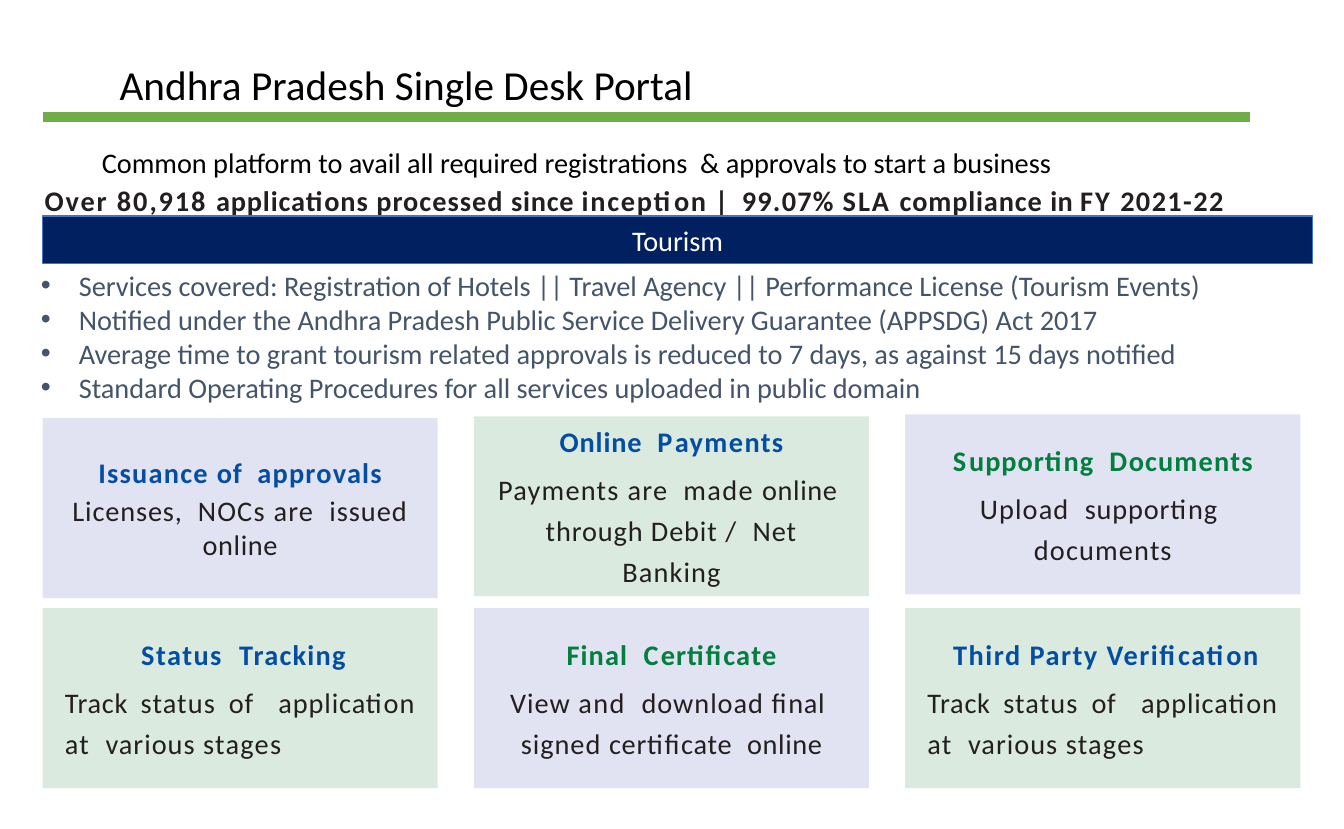
from lxml import etree
from pptx import Presentation
from pptx.dml.color import RGBColor
from pptx.enum.shapes import MSO_CONNECTOR, MSO_SHAPE
from pptx.enum.text import MSO_ANCHOR, MSO_AUTO_SIZE, PP_ALIGN
from pptx.oxml.ns import qn
from pptx.util import Inches, Pt

RECTANGLE = MSO_SHAPE.RECTANGLE
STRAIGHT = MSO_CONNECTOR.STRAIGHT
MIDDLE, TOP = MSO_ANCHOR.MIDDLE, MSO_ANCHOR.TOP
LEFT, CENTER, JUSTIFY = PP_ALIGN.LEFT, PP_ALIGN.CENTER, PP_ALIGN.JUSTIFY
NO_AUTOFIT = MSO_AUTO_SIZE.NONE

COLORS = {
    "black": "000000", "white": "FFFFFF", "ink": "231F20", "slate": "44546A",
    "navy": "002060", "outline": "4472C4", "rule": "70AD47",
    "blue": "034EA2", "green": "007F3E", "lavender": "E1E2F2", "mint": "DBEADF",
}

# Grid: left edge, full width, and the cards' columns and rows (inches)
MARGIN, FULL_WIDTH = 0.46, 13.69
CARD_WIDTH, CARD_HEIGHT, COLUMN_STEP = 4.26, 1.94, 4.65
ROW_TOPS, ROW_SLOPES = (4.51, 6.56), (-0.02, 0)


def set_up_frame(shape, anchor, insets):
    """Return the shape's wrapping text frame with left, top, right, bottom insets."""
    frame = shape.text_frame
    frame.word_wrap = True
    frame.auto_size = NO_AUTOFIT
    frame.vertical_anchor = anchor
    frame.margin_left, frame.margin_top, frame.margin_right, frame.margin_bottom = map(Inches, insets)
    return frame


def write(paragraph, runs, color, size=22, bold=False, align=LEFT,
          before=0, line_spacing=1.0, left=0, right=0, first=0):
    """Format a paragraph and add its (text, letter spacing) runs."""
    paragraph.alignment = align
    paragraph.space_before = Pt(before)
    paragraph.line_spacing = line_spacing
    properties = paragraph._p.get_or_add_pPr()
    for name, length in (("marL", left), ("marR", right), ("indent", first)):
        properties.set(name, str(Inches(length)))
    for text, spacing in runs:
        run = paragraph.add_run()
        run.text = text
        run.font.name = "Calibri"
        run.font.size = Pt(size)
        run.font.bold = bold
        run.font.color.rgb = RGBColor.from_string(COLORS[color])
        if spacing:
            run._r.get_or_add_rPr().set("spc", str(round(spacing * 100)))


presentation = Presentation()
presentation.slide_width, presentation.slide_height = Inches(14.49), Inches(8.94)
slide = presentation.slides.add_slide(presentation.slide_layouts[1])
shapes = slide.shapes
title, services = slide.placeholders

# Title and the rule under it
title.left, title.top, title.width, title.height = map(Inches, (1.19, 0.63, 12.12, 0.63))
frame = set_up_frame(title, MIDDLE, (0.1, 0.05, 0.1, 0.05))
write(frame.paragraphs[0], [("Andhra Pradesh Single Desk Portal", 0)], "black", size=32, line_spacing=0.9)

rule = shapes.add_connector(STRAIGHT, Inches(MARGIN), Inches(1.26), Inches(13.48), Inches(1.26))
rule.line.color.rgb = RGBColor.from_string(COLORS["rule"])
rule.line.width = Pt(8)
etree.SubElement(rule._element.spPr, qn("a:effectLst"))

# Introduction and key figures
introduction = shapes.add_textbox(*map(Inches, (1, 1.52, 12.48, 0.47)))
frame = set_up_frame(introduction, TOP, (0.1, 0.05, 0.1, 0.05))
write(frame.paragraphs[0],
      [("Common platform to avail all required registrations  & approvals to start a business", 0)], "black")

figures = shapes.add_textbox(*map(Inches, (MARGIN, 1.96, FULL_WIDTH, 0.39)))
frame = set_up_frame(figures, TOP, (0, 0.02, 0, 0))
write(frame.paragraphs[0],
      [("Over 80,918 ", 1.5), ("applications ", 0.7), ("processed ", 0.8), ("since ", 0.6),
       ("inception", 1.4), (" |  ", 0.2), ("99.07% ", 1), ("SLA ", 1.6), ("compliance ", 0.7),
       ("in ", 0.3), ("FY ", 1.6), ("2021-22", 1.1)],
      "ink", bold=True, before=1.1, left=0.02)

# Sector banner
banner = shapes.add_shape(RECTANGLE, *map(Inches, (MARGIN, 2.33, FULL_WIDTH, 0.51)))
banner.shadow.inherit = False
banner.fill.solid()
banner.fill.fore_color.rgb = RGBColor.from_string(COLORS["navy"])
banner.line.color.rgb = RGBColor.from_string(COLORS["outline"])
banner.line.width = Pt(1)
frame = set_up_frame(banner, MIDDLE, (0.06,) * 4)
write(frame.paragraphs[0], [("Tourism", 0)], "white", align=CENTER)

# Bulleted services
services.left, services.top, services.width, services.height = map(Inches, (0.34, 2.84, 14.03, 1.58))
frame = set_up_frame(services, TOP, (0.1, 0.05, 0.1, 0.05))
service_lines = [
    "Services covered: Registration of Hotels || Travel Agency || Performance License (Tourism Events)",
    "Notified under the Andhra Pradesh Public Service Delivery Guarantee (APPSDG) Act 2017",
    "Average time to grant tourism related approvals is reduced to 7 days, as against 15 days notified",
    "Standard Operating Procedures for all services uploaded in public domain",
]
for index, line in enumerate(service_lines):
    paragraph = frame.add_paragraph() if index else frame.paragraphs[0]
    write(paragraph, [(line, 0)], "slate", left=0.41, first=-0.41)

# Cards, row by row: heading colour, heading runs and margins, body runs and format
loose = {"line_spacing": 1.2, "before": 5.8}
tracking_heading = {"left": 0.32, "right": 0.32, "first": 0.07}
tracking_body = {"align": JUSTIFY, "left": 0.18, "right": 0.18, **loose}
tracking_runs = [("Track ", 0.6), ("status ", 0.9), ("of  ", 0.6), ("application ", 0.7),
                 ("at  ", 1), ("various ", 0.8), ("stages", 1)]
cards = [
    ("blue", [("Issuance ", 1), ("of  ", 0.7), ("approvals", 1)], {"left": 0.21, "right": 0.21},
     [("Licenses,  ", 0.7), ("NOCs ", 1), ("are  ", 0.9), ("issued ", 0.8), ("online", 0.5)],
     {"align": CENTER, "before": 3.1, "left": 0.21, "right": 0.21}),
    ("blue", [("Online  ", 0.7), ("P", 1.8), ("ayme", 1.1), ("n", 0.9), ("ts", 1)],
     {"left": 0.25, "right": 0.25},
     [("Payments ", 1), ("are  ", 0.9), ("made ", 1.1), ("online  ", 0.5), ("through Debit ", 0.7),
      ("/  ", 0.9), ("Net ", 0.8), ("Banking", 0.9)],
     {"align": CENTER, "left": 0.16, "right": 0.16, **loose}),
    ("green", [("S", 2.2), ("upporting  ", 0.8), ("D", 1.3), ("ocume", 0.9), ("n", 0.7), ("ts", 1)],
     {"left": 0.2, "right": 0.2},
     [("Upload  ", 0.9), ("supporting  ", 0.7), ("docume", 0.9), ("n", 0.7), ("ts", 0.8)],
     {"align": CENTER, "left": 0.29, "right": 0.29, **loose}),
    ("blue", [("Status  ", 1.2), ("T", 0.4), ("racking", 1)], tracking_heading,
     tracking_runs, tracking_body),
    ("green", [("Final  ", 0.9), ("C", 1.9), ("ertific", 0.7), ("ate", 1.1)],
     {"left": 0.23, "right": 0.23},
     [("View ", 0.8), ("and  ", 1.1), ("download ", 0.8), ("final  ", 0.6), ("signed ", 0.8),
      ("certificate  ", 0.6), ("online", 0.5)],
     {"align": CENTER, "left": 0.1, "right": 0.1, **loose}),
    ("blue", [("Third Party Verification", 1.2)], tracking_heading, tracking_runs, tracking_body),
]
for index, (color, heading_runs, heading_format, body_runs, body_format) in enumerate(cards):
    row, column = divmod(index, 3)
    left = MARGIN + column * COLUMN_STEP
    top = ROW_TOPS[row] + column * ROW_SLOPES[row]
    card = shapes.add_shape(RECTANGLE, *map(Inches, (left, top, CARD_WIDTH, CARD_HEIGHT)))
    card.shadow.inherit = False
    card.fill.solid()
    fill = "mint" if (row + column) % 2 else "lavender"
    card.fill.fore_color.rgb = RGBColor.from_string(COLORS[fill])
    card.line.fill.background()
    frame = set_up_frame(card, MIDDLE, (0.06,) * 4)
    write(frame.paragraphs[0], heading_runs, color, bold=True, align=CENTER, before=3.1, **heading_format)
    write(frame.add_paragraph(), body_runs, "ink", **body_format)

presentation.save("out.pptx")
